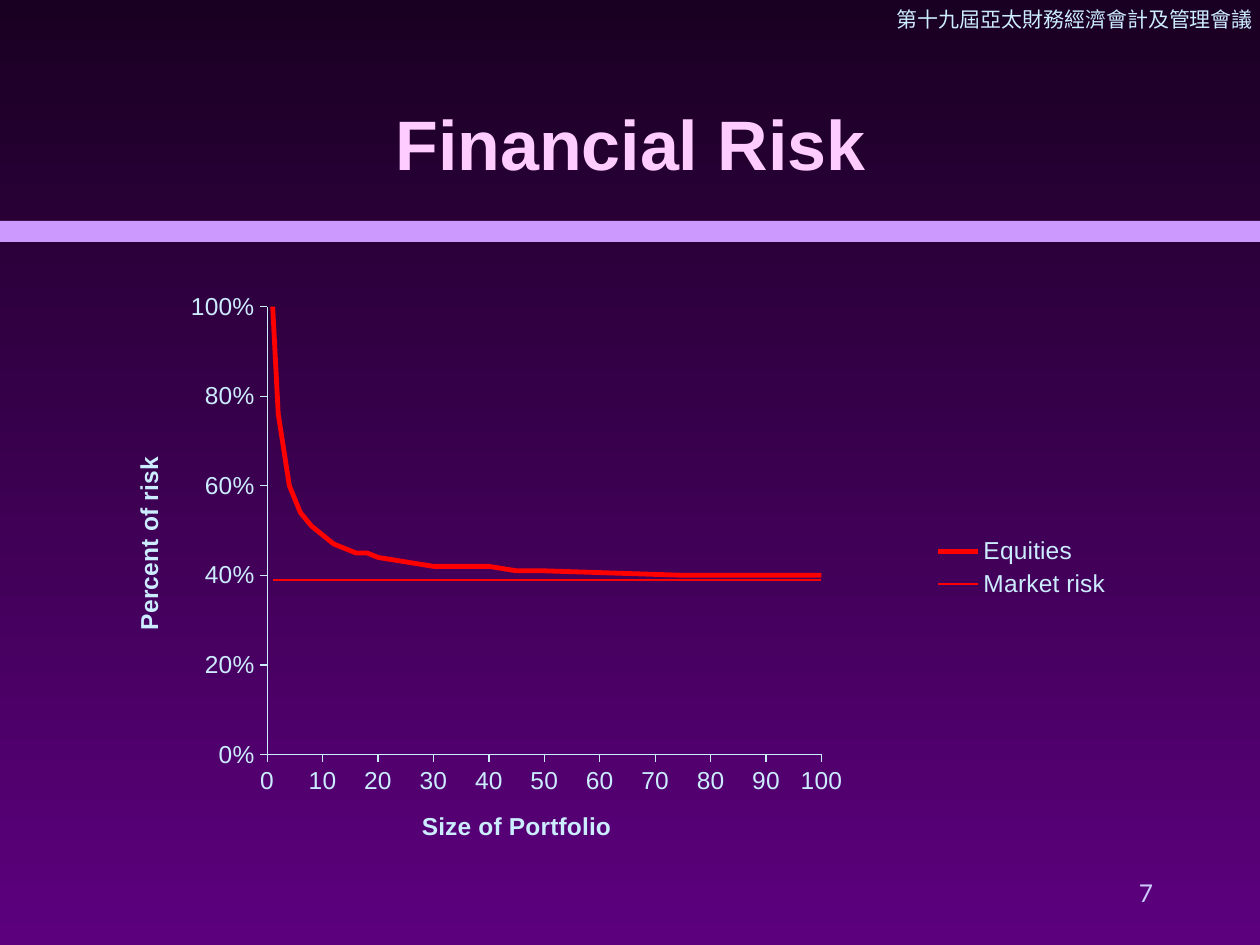
from dataclasses import dataclass

from lxml import etree
from pptx import Presentation
from pptx.chart.data import XyChartData
from pptx.dml.color import RGBColor
from pptx.enum.chart import XL_CHART_TYPE, XL_LEGEND_POSITION, XL_TICK_LABEL_POSITION, XL_TICK_MARK
from pptx.enum.shapes import MSO_SHAPE
from pptx.enum.text import MSO_ANCHOR, PP_ALIGN
from pptx.oxml import parse_xml
from pptx.oxml.ns import nsdecls, qn
from pptx.util import Emu, Pt

SCATTER = XL_CHART_TYPE.XY_SCATTER_LINES_NO_MARKERS
LEGEND_RIGHT = XL_LEGEND_POSITION.RIGHT
LABELS_LOW = XL_TICK_LABEL_POSITION.LOW
TICK_OUT, TICK_NONE = XL_TICK_MARK.OUTSIDE, XL_TICK_MARK.NONE
RECTANGLE = MSO_SHAPE.RECTANGLE
MIDDLE, TOP = MSO_ANCHOR.MIDDLE, MSO_ANCHOR.TOP
LEFT, CENTER, RIGHT = PP_ALIGN.LEFT, PP_ALIGN.CENTER, PP_ALIGN.RIGHT

PX_PER_INCH = 126


def px(length):
    return Emu(round(length * 914400 / PX_PER_INCH))


def rgb(value):
    return RGBColor.from_string(value)


@dataclass(frozen=True)
class Theme:
    sky: str = "190022"
    ground: str = "5D007E"
    band: str = "CC99FF"
    title: str = "FFCCFF"
    text: str = "CCECFF"
    number: str = "CCCCFF"
    curve: str = "FF0000"
    font: str = "Arial"
    header_font: str = "Times New Roman"
    number_font: str = "Lato"
    title_size: int = 40
    chart_size: int = 14
    header_size: int = 12


def style_font(font, name, size, color, bold=False):
    font.name, font.size, font.bold = name, Pt(size), bold
    font.color.rgb = rgb(color)


def write(frame, text, *, font, size, color, bold=False, align=LEFT, anchor=TOP):
    frame.word_wrap = True
    frame.vertical_anchor = anchor
    para = frame.paragraphs[0]
    para.alignment = align
    span = para.add_run()
    span.text = text
    style_font(span.font, font, size, color, bold)


def place(shape, left, top, width, height):
    shape.left, shape.top, shape.width, shape.height = map(px, (left, top, width, height))


def fix_plot_area(chart, x, y, width, height):
    """Set the inner plot area as fractions of the chart frame."""
    plot_area = chart._chartSpace.find(".//" + qn("c:plotArea"))
    for old in plot_area.findall(qn("c:layout")):
        plot_area.remove(old)
    layout = parse_xml(f"<c:layout {nsdecls('c')}><c:manualLayout/></c:layout>")
    settings = [("layoutTarget", "inner"), ("xMode", "edge"), ("yMode", "edge"),
                ("x", x), ("y", y), ("w", width), ("h", height)]
    for tag, value in settings:
        etree.SubElement(layout[0], qn(f"c:{tag}")).set("val", str(value))
    plot_area.insert(0, layout)


class SlideBuilder:
    """Holds the theme and the current page."""

    def __init__(self, page, theme):
        self.page, self.theme = page, theme

    def background(self):
        fill = self.page.background.fill
        fill.gradient()
        fill.gradient_angle = 270
        for stop, color, position in zip(fill.gradient_stops,
                                         (self.theme.sky, self.theme.ground), (0, 1)):
            stop.color.rgb = rgb(color)
            stop.position = position

    def band(self, *bounds):
        bar = self.page.shapes.add_shape(RECTANGLE, *map(px, bounds))
        bar.shadow.inherit = False
        bar.fill.solid()
        bar.fill.fore_color.rgb = rgb(self.theme.band)
        bar.line.fill.background()

    def title(self, text, *bounds):
        box = self.page.shapes.title
        place(box, *bounds)
        write(box.text_frame, text, font=self.theme.font, size=self.theme.title_size,
              color=self.theme.title, bold=True, align=CENTER, anchor=MIDDLE)

    def text(self, text, *bounds, margin_right=12, **style):
        box = self.page.shapes.add_textbox(*map(px, bounds))
        box.text_frame.margin_right = px(margin_right)
        write(box.text_frame, text, **style)

    def style_axis(self, axis, title, maximum, step, number_format):
        theme = self.theme
        axis.minimum_scale, axis.maximum_scale, axis.major_unit = 0, maximum, step
        axis.has_major_gridlines = False
        axis.major_tick_mark, axis.minor_tick_mark = TICK_OUT, TICK_NONE
        axis.tick_label_position = LABELS_LOW
        axis.tick_labels.number_format = number_format
        axis.tick_labels.number_format_is_linked = False
        style_font(axis.tick_labels.font, theme.font, theme.chart_size, theme.text)
        axis.format.line.color.rgb = rgb(theme.text)
        axis.format.line.width = Pt(0.75)
        write(axis.axis_title.text_frame, title, font=theme.font,
              size=theme.chart_size, color=theme.text, bold=True)

    def scatter(self, curves, *bounds):
        """Draw curves given as (name, points, line width)."""
        theme = self.theme
        data = XyChartData()
        for name, points, _ in curves:
            series = data.add_series(name, number_format="0%")
            for x, y in points:
                series.add_data_point(x, y)
        chart = self.page.shapes.add_chart(SCATTER, *map(px, bounds), data).chart
        style_font(chart.font, theme.font, theme.chart_size, theme.text)
        chart.has_title = False
        chart.has_legend = True
        chart.legend.position = LEGEND_RIGHT
        chart.legend.include_in_layout = False
        style_font(chart.legend.font, theme.font, theme.chart_size, theme.text)
        plot = chart.plots[0]
        plot.vary_by_categories = False
        for series, (_, _, width) in zip(plot.series, curves):
            series.smooth = False
            series.format.line.color.rgb = rgb(theme.curve)
            series.format.line.width = Pt(width)
        self.style_axis(chart.category_axis, "Size of Portfolio", 100, 10, "0")
        self.style_axis(chart.value_axis, "Percent of risk", 1, 0.2, "0%")
        fix_plot_area(chart, 0.15, 0.04, 0.55, 0.79)


def main():
    portfolio_sizes = [1, *range(2, 21, 2), *range(25, 51, 5), *range(75, 201, 25), 250, 300]
    equity_risk = [1, 0.76, 0.6, 0.54, 0.51, 0.49, 0.47, 0.46, 0.45, 0.45, 0.44, 0.43, 0.42,
                   0.42, 0.42, 0.41, 0.41, 0.4, 0.4, 0.4, 0.4, 0.4, 0.39, 0.39, 0.39]
    curves = [("Equities", list(zip(portfolio_sizes, equity_risk)), 2.75),
              ("Market risk", [(1, 0.39), (300, 0.39)], 1)]

    theme = Theme()
    deck = Presentation()
    deck.slide_width, deck.slide_height = px(1260), px(945)
    builder = SlideBuilder(deck.slides.add_slide(deck.slide_layouts[5]), theme)
    builder.background()
    builder.band(0, 221, 1260, 21)
    builder.text("第十九屆亞太財務經濟會計及管理會議", 884, 0, 376, 38, margin_right=0,
                 font=theme.header_font, size=theme.header_size, color=theme.text)
    builder.title("Financial Risk", 95, 63, 1071, 158)
    builder.scatter(curves, 116, 284, 1008, 567)
    builder.text("7", 903, 861, 262, 63, font=theme.number_font, size=theme.chart_size,
                 color=theme.number, align=RIGHT, anchor=MIDDLE)
    deck.save("out.pptx")


if __name__ == "__main__":
    main()
